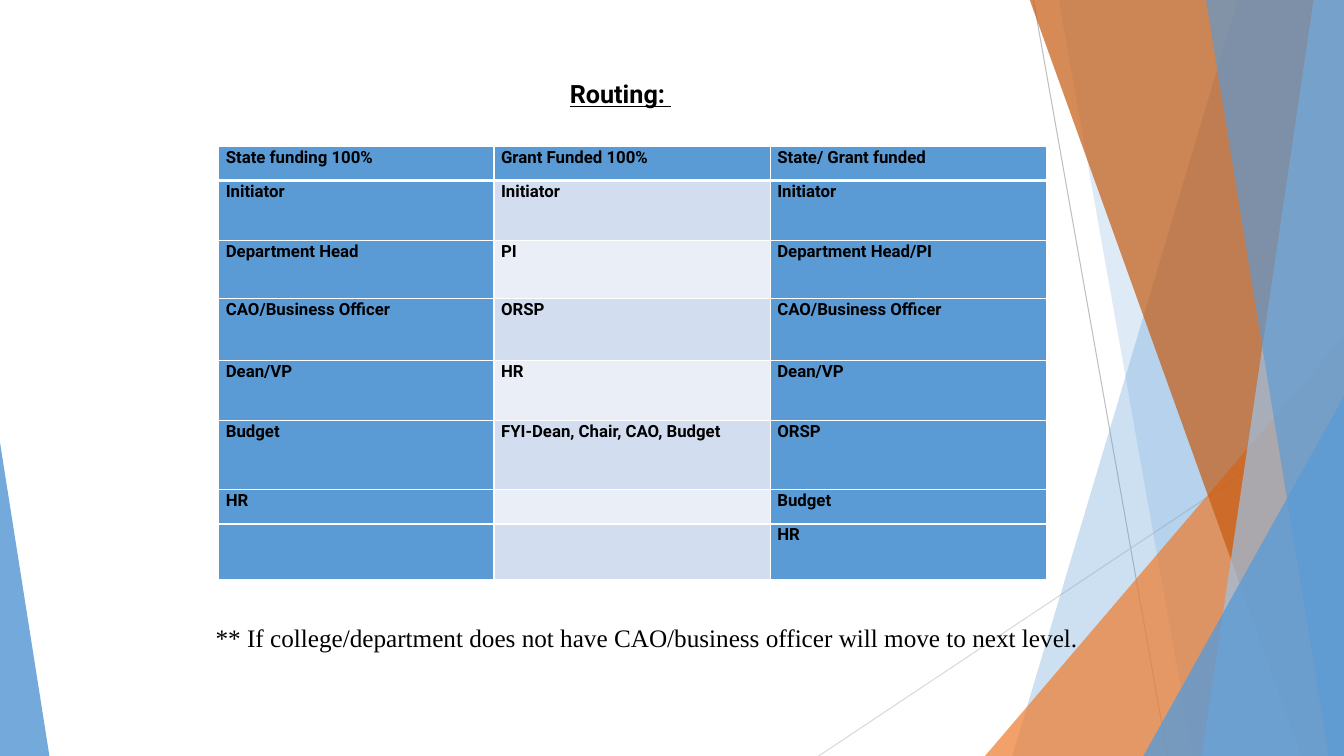
"""Build the routing slide: a funding table on a faceted background."""
import dataclasses
import typing

import lxml.etree
import pptx
import pptx.dml.color
import pptx.enum.shapes
import pptx.enum.text
import pptx.oxml.ns
import pptx.util

Inches = pptx.util.Inches
Pt = pptx.util.Pt
qn = pptx.oxml.ns.qn

COLORS = {
    "blue": "5B9BD5",
    "sky": "9DC3E6",
    "orange": "ED7D31",
    "rust": "C55A11",
    "band_dark": "D2DEEF",
    "band_light": "EAEFF7",
    "rule_dark": "BFBFBF",
    "rule_light": "D9D9D9",
    "white": "FFFFFF",
    "black": "000000",
}
WIDTH, HEIGHT, TOP = 13.33, 7.5, -0.01


@dataclasses.dataclass(frozen=True)
class Rule:
    """A thin background line."""
    start: tuple[float, float]
    end: tuple[float, float]
    color: str


@dataclasses.dataclass(frozen=True)
class Facet:
    """A translucent band from its slanted left edge to the right slide edge."""
    top_x: float
    bottom_x: float
    color: str
    opacity: int


@dataclasses.dataclass(frozen=True)
class Corner:
    """A translucent right triangle standing on the bottom slide edge."""
    left: float
    top: float
    width: float
    apex: float
    color: str
    opacity: int


RULES = [
    Rule((10.25, 0), (11.58, HEIGHT), "rule_dark"),
    Rule((WIDTH, 4.03), (8.12, HEIGHT), "rule_light"),
]
PANELS: list[Facet | Corner] = [
    Facet(12.28, 10.04, "blue", 30),
    Facet(10.5, 11.83, "blue", 20),
    Corner(9.77, 3.33, 3.56, 1, "orange", 72),
    Facet(10.21, 12.91, "rust", 70),
    Facet(13.03, 11.92, "sky", 70),
    Facet(11.96, 13.18, "blue", 65),
    Corner(11.34, 3.93, 1.99, 1, "blue", 80),
    Corner(0, 4.39, 0.49, 0, "blue", 85),
]
ROUTES = [
    ("State funding 100%", "Grant Funded 100%", "State/ Grant funded"),
    ("Initiator", "Initiator", "Initiator"),
    ("Department Head", "PI", "Department Head/PI"),
    ("CAO/Business Officer", "ORSP", "CAO/Business Officer"),
    ("Dean/VP", "HR", "Dean/VP"),
    ("Budget", "FYI-Dean, Chair, CAO, Budget", "ORSP"),
    ("HR", "", "Budget"),
    ("", "", "HR"),
]
COL_WIDTHS = [2.73, 2.74, 2.74]
ROW_HEIGHTS = [0.34, 0.6, 0.57, 0.62, 0.59, 0.69, 0.34, 0.55]

CELL_FORMAT = {
    "margin_left": Inches(0.07),
    "margin_right": Inches(0.07),
    "margin_top": 0,
    "margin_bottom": 0,
}
CELL_PARAGRAPH = {"line_spacing": 1.07, "space_after": Pt(8)}
CELL_FONT = {"name": "Roboto", "size": Pt(12), "bold": True}
TITLE_FONT = {"name": "Roboto", "size": Pt(18), "bold": True, "underline": True}
NOTE_FONT = {"name": "Times New Roman", "size": Pt(18), "bold": False}
FRAME_FORMAT = {
    "word_wrap": True,
    "vertical_anchor": pptx.enum.text.MSO_ANCHOR.TOP,
    "auto_size": pptx.enum.text.MSO_AUTO_SIZE.SHAPE_TO_FIT_TEXT,
}


def rgb(name: str) -> pptx.dml.color.RGBColor:
    """Return a named colour."""
    return pptx.dml.color.RGBColor.from_string(COLORS[name])


def apply(target: typing.Any, values: dict[str, typing.Any]) -> None:
    """Set each format value on the target."""
    for key, value in values.items():
        setattr(target, key, value)


def place(sp: typing.Any, left: float, top: float, width: float, height: float) -> None:
    """Position a shape in inches."""
    apply(sp, {"left": Inches(left), "top": Inches(top),
               "width": Inches(width), "height": Inches(height)})


def write(tf: typing.Any, text: str, font: dict[str, typing.Any]) -> typing.Any:
    """Write one black run and return its paragraph."""
    p = tf.paragraphs[0]
    r = p.add_run()
    r.text = text
    apply(r.font, font)
    r.font.color.rgb = rgb("black")
    return p


def add_rule(s: typing.Any, rule: Rule) -> None:
    """Draw a thin line without a shadow."""
    ends = [Inches(v) for v in rule.start + rule.end]
    sp = s.shapes.add_connector(pptx.enum.shapes.MSO_CONNECTOR.STRAIGHT, *ends)
    sp.line.color.rgb = rgb(rule.color)
    sp.line.width = Pt(0.75)
    lxml.etree.SubElement(sp.element.spPr, qn("a:effectLst"))


def add_panel(s: typing.Any, panel: Facet | Corner) -> None:
    """Draw a translucent facet or corner."""
    if isinstance(panel, Facet):
        points = [(WIDTH, TOP), (WIDTH, HEIGHT), (panel.bottom_x, HEIGHT)]
        builder = s.shapes.build_freeform(Inches(panel.top_x), Inches(TOP))
        builder.add_line_segments([(Inches(x), Inches(y)) for x, y in points])
        sp = builder.convert_to_shape()
    else:
        box = (panel.left, panel.top, panel.width, HEIGHT - panel.top)
        sp = s.shapes.add_shape(pptx.enum.shapes.MSO_SHAPE.ISOSCELES_TRIANGLE,
                                *[Inches(v) for v in box])
        sp.adjustments[0] = panel.apex
    sp.shadow.inherit = False
    sp.line.fill.background()
    sp.fill.solid()
    sp.fill.fore_color.rgb = rgb(panel.color)
    color = next(sp.element.iter(qn("a:srgbClr")))
    lxml.etree.SubElement(color, qn("a:alpha"), val=str(panel.opacity * 1000))


def add_borders(cell: typing.Any, row: int) -> None:
    """Give a cell white borders, heavier below the header."""
    props = cell._tc.get_or_add_tcPr()
    widths = {"L": 1, "R": 1, "T": 3 if row == 1 else 1, "B": 3 if row == 0 else 1}
    for side, width in widths.items():
        line = lxml.etree.SubElement(props, qn(f"a:ln{side}"), w=str(Pt(width)))
        fill = lxml.etree.SubElement(line, qn("a:solidFill"))
        lxml.etree.SubElement(fill, qn("a:srgbClr"), val=COLORS["white"])


def cell_color(row: int, col: int) -> str:
    """Band the body of the middle column and keep the rest blue."""
    if row == 0 or col != 1:
        return "blue"
    return "band_dark" if row % 2 else "band_light"


def add_routes(s: typing.Any) -> None:
    """Draw the routing table."""
    box = (2.17, 1.45, sum(COL_WIDTHS), sum(ROW_HEIGHTS))
    table = s.shapes.add_table(len(ROUTES), len(COL_WIDTHS), *[Inches(v) for v in box]).table
    for column, width in zip(table.columns, COL_WIDTHS):
        column.width = Inches(width)
    for i, (height, texts) in enumerate(zip(ROW_HEIGHTS, ROUTES)):
        table.rows[i].height = Inches(height)
        for j, text in enumerate(texts):
            cell = table.cell(i, j)
            apply(cell, CELL_FORMAT)
            add_borders(cell, i)
            cell.fill.solid()
            cell.fill.fore_color.rgb = rgb(cell_color(i, j))
            if text:
                apply(write(cell.text_frame, text, CELL_FONT), CELL_PARAGRAPH)


def main() -> None:
    """Build and save the slide."""
    prs = pptx.Presentation()
    apply(prs, {"slide_width": Inches(WIDTH), "slide_height": Inches(HEIGHT)})
    s = prs.slides.add_slide(prs.slide_layouts[5])
    for rule in RULES:
        add_rule(s, rule)
    for panel in PANELS:
        add_panel(s, panel)
    add_routes(s)
    title = s.shapes.title
    place(title, 3.98, 0.73, 4.35, 0.71)
    apply(title.text_frame, FRAME_FORMAT)
    write(title.text_frame, "Routing: ", TITLE_FONT).alignment = pptx.enum.text.PP_ALIGN.CENTER
    note = s.shapes.add_textbox(*[Inches(v) for v in (2.04, 6.12, 9.75, 0.71)])
    apply(note.text_frame, FRAME_FORMAT)
    write(note.text_frame, "** If college/department does not have CAO/business officer "
          "will move to next level.", NOTE_FONT)
    prs.save("out.pptx")


if __name__ == "__main__":
    main()
